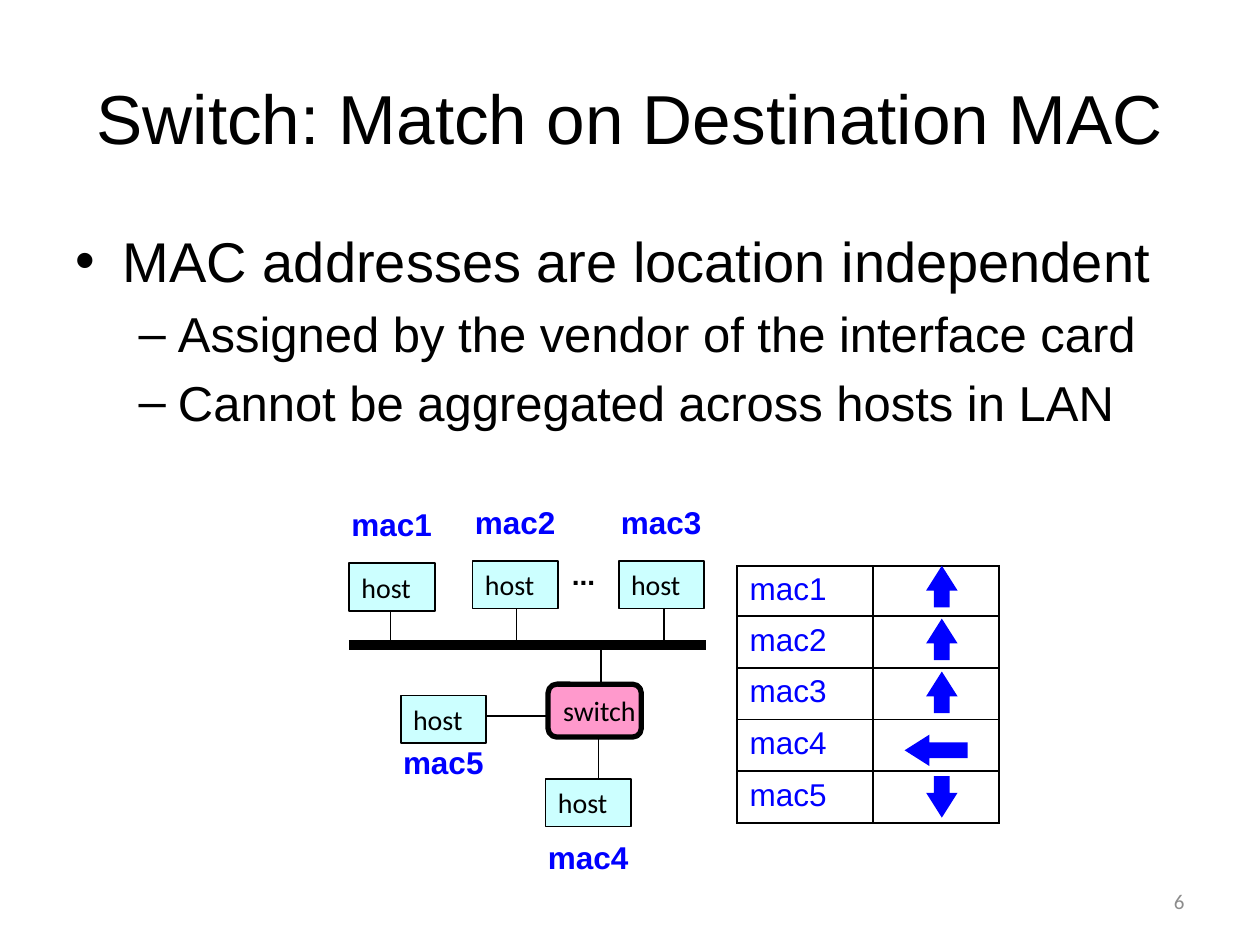
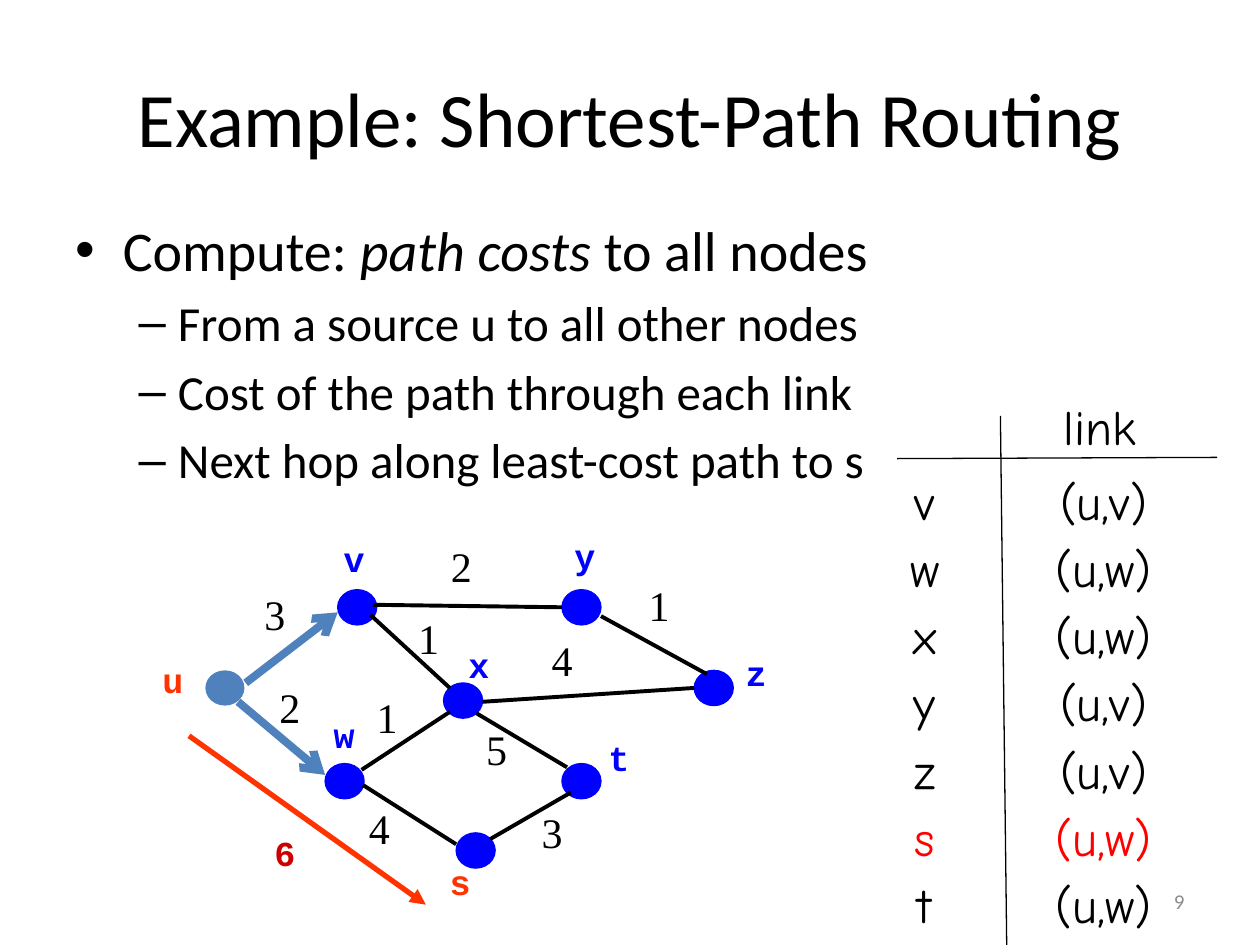
from lxml import etree
from pptx import Presentation
from pptx import util as u
from pptx.dml.color import RGBColor
from pptx.enum import shapes, text
from pptx.oxml import ns

BLACK = RGBColor(0, 0, 0)
BLUE = RGBColor(0, 0, 0xFF)
STEEL = RGBColor(0x4F, 0x81, 0xBD)
ORANGE = RGBColor(0xFF, 0x33, 0)
DARK_RED = RGBColor(0xCC, 0, 0)
RED = RGBColor(0xFF, 0, 0)
CYAN = RGBColor(0xCC, 0xFF, 0xFF)
PINK = RGBColor(0xFF, 0x99, 0xCC)
GRAY = RGBColor(0x8C, 0x8C, 0x8C)

# Font formats; "color" is handled apart from the plain attributes
PAGE = dict(name="Calibri", size=u.Pt(12), color=GRAY)
DEVICE = dict(name="Calibri", size=u.Pt(16), color=BLACK)
DOTS = dict(name="Arial", size=u.Pt(16), bold=True, color=BLACK)
MAC = dict(name="Arial", size=u.Pt(18), color=BLUE)
COST = dict(name="Times New Roman", size=u.Pt(24), color=BLACK)
NODE = dict(name="Courier New", size=u.Pt(20), bold=True, color=BLUE)
ROUTE = dict(name="Comic Neue", size=u.Pt(28), color=BLACK)
BODY_SIZES = (32, 28)

HOST_SIZE = (0.68, 0.38)
NODE_SIZE = (0.31, 0.28)


def inches(*lengths):
    return [u.Inches(length) for length in lengths]


def style(font, form):
    for name, value in form.items():
        if name == "color":
            font.color.rgb = value
        else:
            setattr(font, name, value)


def write(frame, words, form, **settings):
    """Put one formatted run in a frame; settings go to the frame."""
    for name, value in settings.items():
        setattr(frame, name, value)
    run = frame.paragraphs[0].add_run()
    run.text = words
    style(run.font, form)
    return frame.paragraphs[0]


def label(slide, words, x, y, w, h, form, align=text.PP_ALIGN.LEFT, wrap=False,
          anchor=text.MSO_ANCHOR.TOP):
    frame = slide.shapes.add_textbox(*inches(x, y, w, h)).text_frame
    write(frame, words, form, word_wrap=wrap,
          vertical_anchor=anchor).alignment = align


def block(slide, kind, x, y, w, h, fill, outline=None, width=1.0):
    shape = slide.shapes.add_shape(kind, *inches(x, y, w, h))
    shape.shadow.inherit = False
    shape.fill.solid()
    shape.fill.fore_color.rgb = fill
    if outline is None:
        shape.line.fill.background()
    else:
        shape.line.color.rgb = outline
        shape.line.width = u.Pt(width)
    return shape


def device(slide, words, kind, x, y, w, h, fill, width=1.0):
    shape = block(slide, kind, x, y, w, h, fill, BLACK, width)
    write(shape.text_frame, words, DEVICE, word_wrap=False,
          vertical_anchor=text.MSO_ANCHOR.MIDDLE).alignment = text.PP_ALIGN.LEFT


def line(slide, x1, y1, x2, y2, color=BLACK, width=1.0, head=None):
    link = slide.shapes.add_connector(shapes.MSO_CONNECTOR.STRAIGHT,
                                      *inches(x1, y1, x2, y2))
    link.line.color.rgb = color
    link.line.width = u.Pt(width)
    if head:
        etree.SubElement(link.line._get_or_add_ln(), ns.qn("a:tailEnd"), type=head)
    etree.SubElement(link._element.spPr, ns.qn("a:effectLst"))


def start_slide(prs, title, title_size, font, items, body_box, number):
    """Title, list and page number; items are (level, [(words, italic)])."""
    slide = prs.slides.add_slide(prs.slide_layouts[1])
    heading, body = slide.placeholders
    for part, box in ((heading, (0.5, 0.3, 9, 1.25)), (body, body_box)):
        part.left, part.top, part.width, part.height = inches(*box)
        part.text_frame.auto_size = text.MSO_AUTO_SIZE.NONE
    write(heading.text_frame, title,
          dict(name=font, size=u.Pt(title_size), color=BLACK),
          vertical_anchor=text.MSO_ANCHOR.MIDDLE).alignment = text.PP_ALIGN.CENTER
    for index, (level, pieces) in enumerate(items):
        frame = body.text_frame
        item = frame.add_paragraph() if index else frame.paragraphs[0]
        item.level = level
        for words, italic in pieces:
            run = item.add_run()
            run.text = words
            style(run.font, dict(name=font, size=u.Pt(BODY_SIZES[level]),
                                 italic=italic, color=BLACK))
    label(slide, number, 7.17, 6.95, 2.33, 0.4, PAGE, text.PP_ALIGN.RIGHT, True,
          text.MSO_ANCHOR.MIDDLE)
    return slide


def border(cell):
    props = cell._tc.get_or_add_tcPr()
    for index, side in enumerate(("lnL", "lnR", "lnT", "lnB")):
        edge = etree.Element(ns.qn("a:" + side), w=str(u.Pt(1)))
        paint = etree.SubElement(edge, ns.qn("a:solidFill"))
        etree.SubElement(paint, ns.qn("a:srgbClr"), val=str(BLACK))
        props.insert(index, edge)


def forwarding_table(slide):
    frame = slide.shapes.add_table(5, 2, *inches(5.85, 4.49, 2.08, 2.02))
    table = frame.table
    table.first_row = table.horz_banding = False
    for column, width in zip(table.columns, inches(1.08, 1)):
        column.width = width
    for index, row in enumerate(table.rows):
        row.height = u.Inches(0.41 if index else 0.38)
        for cell in row.cells:
            cell.fill.background()
            border(cell)
        write(row.cells[0].text_frame, f"mac{index + 1}", MAC)

    # Output ports
    up, left, down = (shapes.MSO_SHAPE.UP_ARROW, shapes.MSO_SHAPE.LEFT_ARROW,
                      shapes.MSO_SHAPE.DOWN_ARROW)
    for kind, x, y, w, h in ((up, 7.35, 4.49, 0.25, 0.33), (up, 7.35, 4.91, 0.25, 0.33),
                             (up, 7.35, 5.33, 0.25, 0.33), (left, 7.18, 5.83, 0.5, 0.25),
                             (down, 7.35, 6.16, 0.25, 0.33)):
        block(slide, kind, x, y, w, h, BLUE).adjustments[1] = 0.79


def switch_slide(prs):
    slide = start_slide(
        prs, "Switch: Match on Destination MAC", 39.6, "Arial",
        [(0, [("MAC addresses are location independent", False)]),
         (1, [("Assigned by the vendor of the interface card", False)]),
         (1, [("Cannot be aggregated across hosts in LAN", False)])],
        (0.5, 1.75, 9, 2.12), "6")
    forwarding_table(slide)

    # Shared bus and the wires to it
    line(slide, 2.77, 5.12, 5.6, 5.12, width=6)
    for x in (3.1, 4.1, 5.27):
        line(slide, x, 4.78, x, 5.12)
    for wire in ((4.77, 5.12, 4.77, 5.45), (4.75, 5.85, 4.75, 6.18),
                 (3.85, 5.68, 4.35, 5.68)):
        line(slide, *wire)

    # Hosts with their addresses, and the switch
    hosts = {"mac1": (2.77, 4.47, -0.51), "mac2": (3.75, 4.45, -0.51),
             "mac3": (4.91, 4.45, -0.51), "mac4": (4.33, 6.18, 0.42),
             "mac5": (3.18, 5.52, 0.33)}
    for address, (x, y, offset) in hosts.items():
        device(slide, "host", shapes.MSO_SHAPE.RECTANGLE, x, y, *HOST_SIZE, CYAN)
        label(slide, address, x - 0.08, y + offset, 0.85, 0.4, {**MAC, "bold": True})
    label(slide, "...", 4.44, 4.37, 0.39, 0.37, DOTS, anchor=text.MSO_ANCHOR.MIDDLE)
    device(slide, "switch", shapes.MSO_SHAPE.ROUNDED_RECTANGLE,
           4.35, 5.43, 0.74, 0.42, PINK, 3)


def routing_table(slide):
    line(slide, 7.94, 3.3, 7.99, 7.5, width=0.75)
    line(slide, 7.12, 3.64, 9.66, 3.63, width=0.75)
    center = text.PP_ALIGN.CENTER
    label(slide, "link", 8.03, 3.1, 1.4, 0.57, ROUTE, center, True)
    next_hops = dict(v="v", w="w", x="w", y="v", z="v", s="w", t="w")
    for index, (node, hop) in enumerate(next_hops.items()):
        y = 3.69 + 0.534 * index
        form = {**ROUTE, "color": RED if node == "s" else BLACK}
        label(slide, node, 6.99, y, 0.7, 0.57, form, center, True)
        label(slide, f"(u,{hop})", 8.06, y, 1.4, 0.57, form, center, True)


def routing_slide(prs):
    slide = start_slide(
        prs, "Example: Shortest-Path Routing", 44, "Calibri",
        [(0, [("Compute: ", False), ("path costs", True), (" to all nodes", False)]),
         (1, [("From a source u to all other nodes", False)]),
         (1, [("Cost of the path through each link", False)]),
         (1, [("Next hop along least-cost path to s", False)])],
        (0.5, 1.66, 9, 2.52), "9")

    # Nodes: place of the dot, place of the name
    nodes = {"u": (1.63, 5.32, 1.19, 5.18), "w": (2.58, 6.06, 2.55, 5.61),
             "v": (2.68, 4.68, 2.63, 4.22), "x": (3.52, 5.42, 3.62, 5.06),
             "t": (4.46, 6.06, 4.73, 5.8), "y": (4.46, 4.68, 4.46, 4.19),
             "s": (3.62, 6.61, 3.47, 6.78), "z": (5.51, 5.32, 5.82, 5.12)}
    for name, (x, y, name_x, name_y) in nodes.items():
        fill, outline = (STEEL, None) if name == "u" else (BLUE, BLUE)
        block(slide, shapes.MSO_SHAPE.OVAL, x, y, *NODE_SIZE, fill, outline, 0.75)
        color = ORANGE if name in "us" else BLUE
        label(slide, name, name_x, name_y, 0.37, 0.43, {**NODE, "color": color})

    # Links: ends, cost and place of the cost
    first_hops = [((1.95, 5.42, 2.68, 4.86), "3", 2, 4.62),
                  ((1.89, 5.57, 2.58, 6.15), "2", 2.12, 5.36)]
    links = [((2.94, 4.88, 3.57, 5.46), "1", 3.22, 4.81),
             ((2.88, 6.23, 3.62, 6.7), "4", 2.83, 6.32),
             ((2.87, 6.11, 3.57, 5.65), "1", 2.89, 5.44),
             ((3.78, 5.66, 4.5, 6.09), "5", 3.76, 5.69),
             ((3.89, 6.66, 4.53, 6.29), "3", 4.2, 6.35),
             ((3.83, 5.57, 5.51, 5.46), "4", 4.28, 4.99),
             ((2.96, 4.8, 4.46, 4.82), "2", 3.48, 4.24),
             ((4.77, 4.89, 5.61, 5.35), "1", 5.05, 4.55)]
    for group, form in ((first_hops, (STEEL, 4.5, "arrow")), (links, (BLACK, 2.25))):
        for ends, cost, x, y in group:
            line(slide, *ends, *form)
            label(slide, cost, x, y, 0.37, 0.5, COST)

    # Total cost from u to s
    line(slide, 1.5, 5.84, 3.38, 7.18, ORANGE, 3, "triangle")
    label(slide, "6", 2.08, 6.55, 0.37, 0.43, {**NODE, "color": DARK_RED})
    routing_table(slide)


def main():
    prs = Presentation()
    prs.slide_width, prs.slide_height = inches(10, 7.5)
    switch_slide(prs)
    routing_slide(prs)
    prs.save("out.pptx")


if __name__ == "__main__":
    main()
